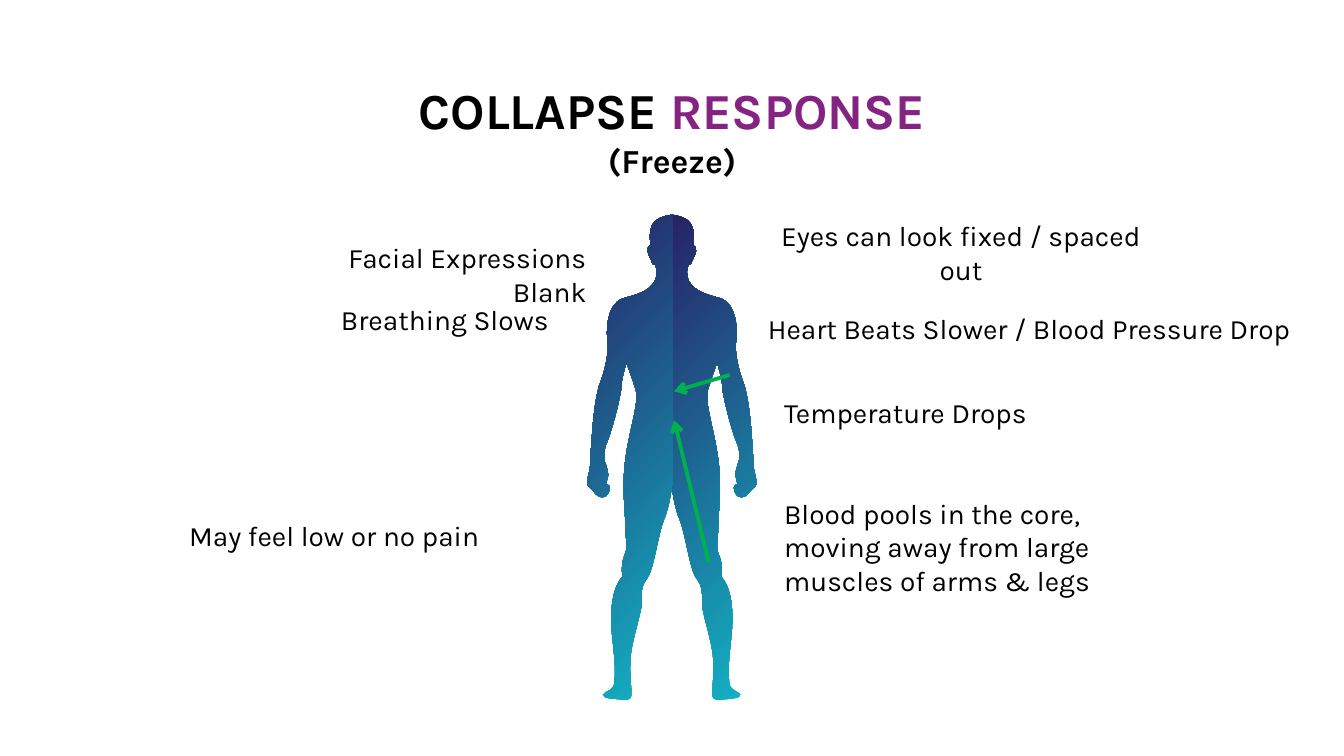
from dataclasses import dataclass

from lxml import etree
from pptx import Presentation
from pptx import util as u
from pptx.dml.color import RGBColor
from pptx.enum import shapes, text
from pptx.oxml.ns import qn

COLORS = {
    "ink": "000000",
    "purple": "852382",
    "green": "00B050",
    "body_light": "12B5C6",
    "body_dark": "272266",
}
FONT = "Karla"
LEFT, CENTER, RIGHT = text.PP_ALIGN.LEFT, text.PP_ALIGN.CENTER, text.PP_ALIGN.RIGHT

Point = tuple[float, float]


@dataclass
class Label:
    words: str
    left: float
    top: float
    width: float
    align: text.PP_ALIGN = LEFT
    height: float = 1.12


@dataclass
class Arrow:
    start: Point
    end: Point


LABELS = [
    Label("Facial Expressions Blank", 6.88, 5.94, 8.15, RIGHT),
    Label("Breathing Slows ", 4.6, 7.49, 9.65, RIGHT),
    Label("Eyes can look fixed / spaced out", 18.85, 5.38, 10.74, CENTER),
    Label("Heart Beats Slower / Blood Pressure Drop", 19.1, 7.72, 13.69),
    Label("Temperature Drops", 19.51, 9.83, 9.65),
    Label("Blood pools in the core, moving away from large muscles of arms & legs",
          19.51, 12.38, 9.65, height=2.82),
    Label("May feel low or no pain", 2.68, 12.95, 9.65, RIGHT),
]

ARROWS = [
    Arrow((18.39, 9.45), (16.99, 9.86)),
    Arrow((17.86, 14.17), (16.99, 10.59)),
]

# Half of the body: Bezier curves (two handles and an end) around the body axis
BODY_AXIS = 666.6
BODY_UNIT = 0.0254
BODY_START = (-1, 213)
BODY_CURVES = [
    # Inner leg and foot
    ((-1, 474), (-1, 474), (-1, 474)),
    ((-1, 474), (1, 500), (8, 516)),
    ((14, 532), (18, 565), (24, 573)),
    ((31, 582), (30, 588), (30, 600)),
    ((31, 611), (41, 640), (41, 655)),
    ((42, 670), (40, 682), (40, 687)),
    ((40, 693), (41, 695), (50, 694)),
    ((59, 693), (69, 693), (68, 689)),
    # Outer leg and waist
    ((66, 685), (57, 686), (57, 676)),
    ((56, 666), (56, 661), (59, 633)),
    ((62, 605), (59, 583), (49, 572)),
    ((49, 572), (51, 560), (47, 551)),
    ((43, 542), (46, 538), (46, 523)),
    ((46, 510), (50, 483), (46, 455)),
    ((42, 425), (32, 399), (36, 386)),
    ((40, 373), (45, 360), (45, 360)),
    # Arm and hand
    ((45, 360), (50, 376), (50, 383)),
    ((50, 391), (59, 426), (64, 438)),
    ((69, 449), (67, 458), (65, 462)),
    ((64, 466), (62, 471), (64, 475)),
    ((65, 479), (65, 481), (65, 481)),
    ((65, 481), (63, 480), (62, 482)),
    ((61, 484), (62, 489), (65, 492)),
    ((70, 495), (74, 493), (78, 487)),
    ((82, 483), (85, 482), (84, 477)),
    ((83, 471), (81, 465), (81, 461)),
    ((81, 456), (80, 441), (79, 428)),
    ((78, 415), (76, 396), (72, 382)),
    # Shoulder, neck and head
    ((66, 367), (62, 348), (64, 337)),
    ((65, 327), (65, 299), (45, 295)),
    ((25, 290), (15, 283), (15, 270)),
    ((15, 270), (15, 266), (17, 262)),
    ((17, 262), (17, 263), (19, 262)),
    ((20, 261), (20, 257), (22, 255)),
    ((24, 252), (26, 245), (21, 243)),
    ((21, 243), (24, 228), (18, 221)),
    ((13, 214), (-1, 213), (-1, 213)),
]


def rgb(name: str) -> RGBColor:
    return RGBColor.from_string(COLORS[name])


def style_run(r, size: int, color: str = "ink", bold: bool = False) -> None:
    r.font.name, r.font.size, r.font.bold = FONT, u.Pt(size), bold
    r.font.color.rgb = rgb(color)


def body_point(point: Point, side: int) -> tuple[int, int]:
    """Place a body point; side is 1 for right and -1 for left."""
    x, y = point
    return u.Cm((BODY_AXIS + side * x) * BODY_UNIT), u.Cm(y * BODY_UNIT)


def bend_lines(sp) -> None:
    """Turn each three straight segments into one Bezier curve."""
    lines = list(sp._element.iter(qn("a:lnTo")))
    for handle, second, end in zip(lines[::3], lines[1::3], lines[2::3]):
        curve = etree.Element(qn("a:cubicBezTo"))
        handle.addprevious(curve)
        for line in (handle, second, end):
            curve.append(line[0])
            line.getparent().remove(line)


def draw_half_body(group, side: int) -> None:
    builder = group.shapes.build_freeform(*body_point(BODY_START, side))
    points = [body_point(point, side) for curve in BODY_CURVES for point in curve]
    builder.add_line_segments(points, close=True)
    sp = builder.convert_to_shape()
    bend_lines(sp)
    sp.shadow.inherit = False
    sp.line.fill.background()
    sp.fill.gradient()
    sp.fill.gradient_angle = 135
    for stop, color in zip(sp.fill.gradient_stops, ("body_light", "body_dark")):
        stop.color.rgb = rgb(color)


def draw_title(s) -> None:
    sp = s.shapes.title
    sp.left, sp.top, sp.width, sp.height = (u.Cm(n) for n in (10.21, 1.87, 13.46, 2.82))
    tf = sp.text_frame
    tf.text = "COLLAPSE \n(Freeze)"
    tf.word_wrap = False
    tf.auto_size = text.MSO_AUTO_SIZE.NONE
    tf.vertical_anchor = text.MSO_ANCHOR.TOP
    heading, subheading = tf.paragraphs
    heading.add_run().text = "RESPONSE"
    style_run(heading.runs[0], 36, bold=True)
    style_run(heading.runs[1], 36, "purple", bold=True)
    style_run(subheading.runs[0], 24, bold=True)
    for p in tf.paragraphs:
        p.alignment = CENTER


def draw_label(s, label: Label) -> None:
    box = (label.left, label.top, label.width, label.height)
    tf = s.shapes.add_textbox(*(u.Cm(n) for n in box)).text_frame
    tf.word_wrap = True
    p = tf.paragraphs[0]
    p.text = label.words
    p.alignment = label.align
    style_run(p.runs[0], 20)


def draw_arrow(s, arrow: Arrow) -> None:
    ends = (u.Cm(n) for n in (*arrow.start, *arrow.end))
    line = s.shapes.add_connector(shapes.MSO_CONNECTOR.STRAIGHT, *ends)
    line.line.color.rgb = rgb("green")
    line.line.width = u.Pt(2.75)
    etree.SubElement(line.line._get_or_add_ln(), qn("a:tailEnd"), type="arrow")
    etree.SubElement(line._element.spPr, qn("a:effectLst"))


def main() -> None:
    prs = Presentation()
    prs.slide_width, prs.slide_height = u.Cm(33.87), u.Cm(19.05)
    s = prs.slides.add_slide(prs.slide_layouts[5])

    # Body, right half first
    body = s.shapes.add_group_shape()
    for side in (1, -1):
        draw_half_body(body, side)

    # Texts and arrows
    draw_title(s)
    for label in LABELS:
        draw_label(s, label)
    for arrow in ARROWS:
        draw_arrow(s, arrow)

    prs.save("out.pptx")


if __name__ == "__main__":
    main()
